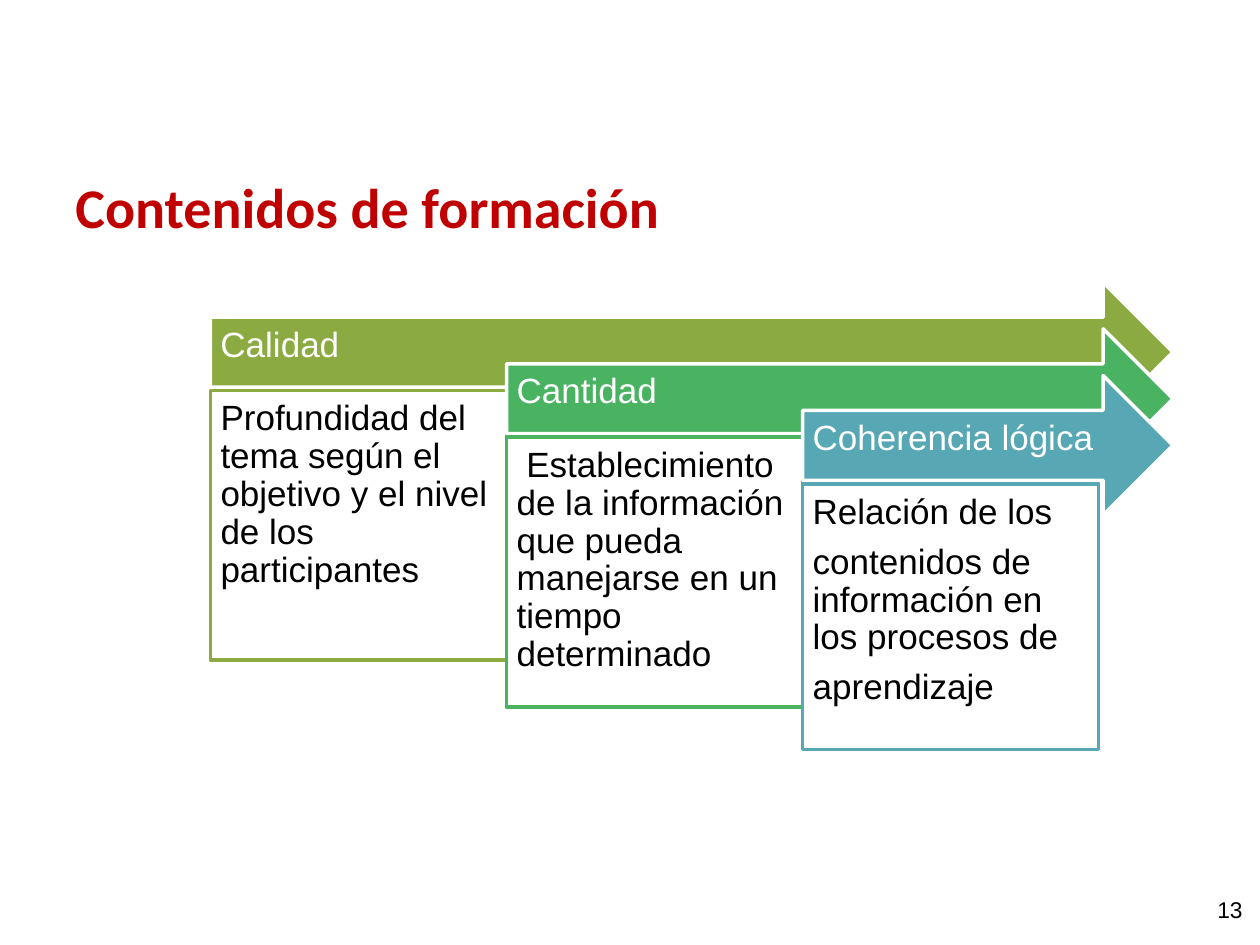
from pptx import Presentation
from pptx.dml.color import RGBColor
from pptx.enum.shapes import MSO_SHAPE
from pptx.enum.text import MSO_ANCHOR, MSO_AUTO_SIZE, PP_ALIGN
from pptx.util import Inches, Pt

COLORS = {
    "title": "C00000",
    "text": "000000",
    "white": "FFFFFF",
    "quality": "8BAB42",
    "quantity": "4AB362",
    "coherence": "57A7B5",
}

STAGES = [
    ("Calidad", "quality", 2.14,
     ["Profundidad del tema según el objetivo y el nivel de los participantes"]),
    ("Cantidad", "quantity", 2.14,
     [" Establecimiento de la información que pueda manejarse en un tiempo determinado"]),
    ("Coherencia lógica", "coherence", 2.11,
     ["Relación de los", "contenidos de información en los procesos de", "aprendizaje"]),
]

STAGES_LEFT, STAGES_TOP, STAGES_RIGHT = 1.67, 2.24, 9.31
COLUMN_WIDTH, STEP_DOWN = 2.35, 0.37
ARROW_HEIGHT, DETAIL_OFFSET = 1.11, 0.86


def rgb(name):
    return RGBColor.from_string(COLORS[name])


def set_insets(frame, left, top, right, bottom):
    frame.margin_left = Inches(left)
    frame.margin_top = Inches(top)
    frame.margin_right = Inches(right)
    frame.margin_bottom = Inches(bottom)


def set_font(paragraph, family, size, color, bold=False):
    font = paragraph.font
    font.name = family
    font.size = Pt(size)
    font.bold = bold
    font.color.rgb = rgb(color)


def add_label(slide, box, text, family, size, color, bold=False):
    label = slide.shapes.add_textbox(*map(Inches, box))
    frame = label.text_frame
    frame.text = text
    set_font(frame.paragraphs[0], family, size, color, bold)
    return frame


def add_panel(group, preset, box, fill, line, lines, color):
    panel = group.shapes.add_shape(preset, *map(Inches, box))
    panel.shadow.inherit = False
    panel.fill.solid()
    panel.fill.fore_color.rgb = rgb(fill)
    panel.line.color.rgb = rgb(line)
    panel.line.width = Pt(2)
    frame = panel.text_frame
    frame.word_wrap = True
    frame.text = "\n".join(lines)
    for paragraph in frame.paragraphs:
        paragraph.alignment = PP_ALIGN.LEFT
        paragraph.line_spacing = 0.9
        paragraph.space_after = Pt(7)
        set_font(paragraph, "Arial", 20, color)
    return frame


def add_stage(group, index, heading, color, detail_height, details):
    left = STAGES_LEFT + index * COLUMN_WIDTH
    top = STAGES_TOP + index * STEP_DOWN
    arrow_box = (left, top, STAGES_RIGHT - left, ARROW_HEIGHT)
    arrow = add_panel(group, MSO_SHAPE.RIGHT_ARROW, arrow_box,
                      color, "white", [heading], "white")
    arrow.vertical_anchor = MSO_ANCHOR.MIDDLE
    set_insets(arrow, 0.08, 0.08, 0, 0.18)

    detail_box = (left, top + DETAIL_OFFSET, COLUMN_WIDTH, detail_height)
    detail = add_panel(group, MSO_SHAPE.RECTANGLE, detail_box,
                       "white", color, details, "text")
    detail.vertical_anchor = MSO_ANCHOR.TOP
    set_insets(detail, 0.08, 0.08, 0.08, 0.08)


def main():
    presentation = Presentation()
    presentation.slide_width = Inches(10)
    presentation.slide_height = Inches(7.5)
    slide = presentation.slides.add_slide(presentation.slide_layouts[6])

    page_number = add_label(slide, (9.36, 6.93, 0.6, 0.57), "13", "Arial", 13, "text")
    page_number.word_wrap = True
    page_number.vertical_anchor = MSO_ANCHOR.MIDDLE
    page_number.paragraphs[0].alignment = PP_ALIGN.RIGHT
    set_insets(page_number, 0.1, 0.1, 0.1, 0.1)

    title = add_label(slide, (0.5, 1.32, 4.89, 0.64), "Contenidos de formación",
                      "Calibri", 32, "title", bold=True)
    title.word_wrap = False
    title.auto_size = MSO_AUTO_SIZE.SHAPE_TO_FIT_TEXT

    stages = slide.shapes.add_group_shape()
    for index, stage in enumerate(STAGES):
        add_stage(stages, index, *stage)

    presentation.save("out.pptx")


if __name__ == "__main__":
    main()
